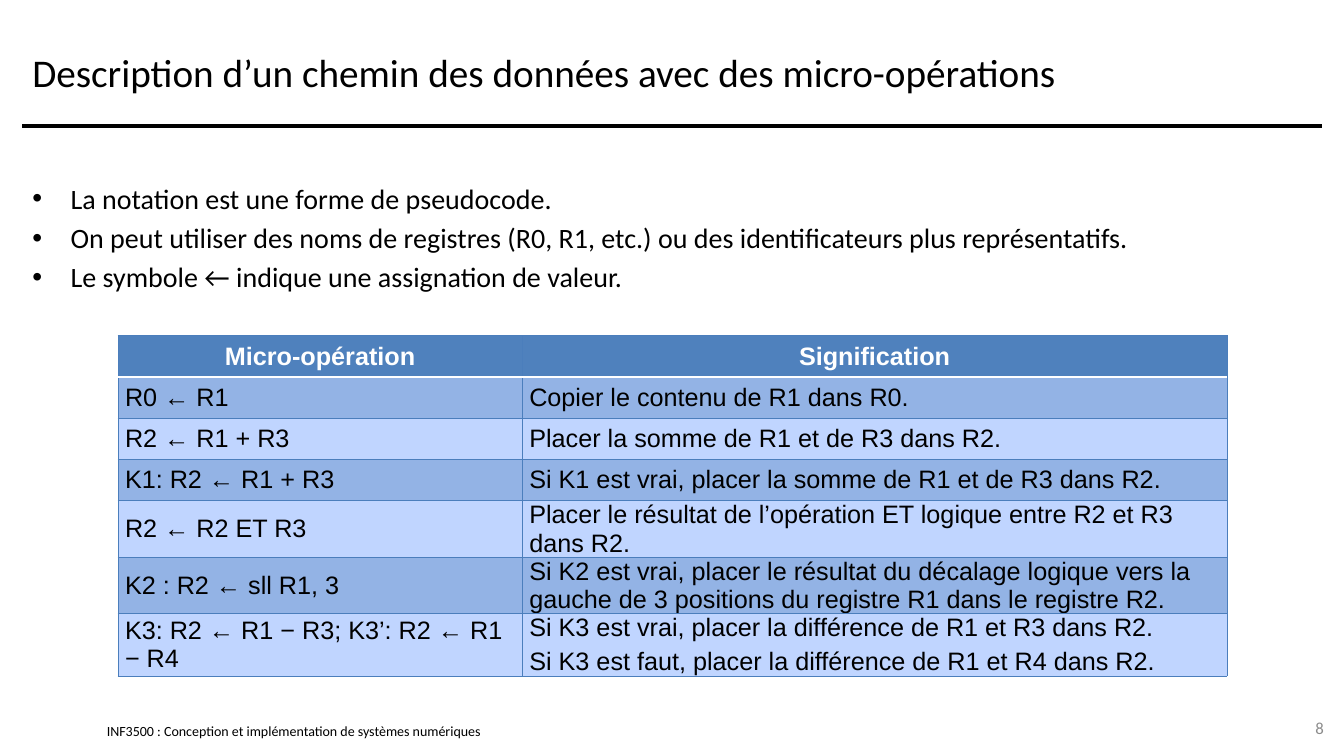
from lxml.etree import SubElement
from pptx import Presentation
from pptx.dml.color import RGBColor
from pptx.enum.shapes import MSO_CONNECTOR as Connector
from pptx.enum.text import MSO_ANCHOR as Anchor, MSO_AUTO_SIZE as AutoSize, PP_ALIGN as Align
from pptx.oxml.ns import qn
from pptx.util import Inches, Pt

COLORS = {"ink": "000000", "header": "4F81BD", "band": "93B3E5", "plain": "C0D5FF",
          "border": "4B7EBC", "white": "FFFFFF", "number": "8C8C8C"}

TITLE = "Description d’un chemin des données avec des micro-opérations"
BULLETS = [
    "La notation est une forme de pseudocode.",
    "On peut utiliser des noms de registres (R0, R1, etc.) ou des identificateurs plus représentatifs.",
    "Le symbole ← indique une assignation de valeur.",
]
OPERATIONS = [
    ("Micro-opération", "Signification"),
    ("R0 ← R1", "Copier le contenu de R1 dans R0."),
    ("R2 ← R1 + R3", "Placer la somme de R1 et de R3 dans R2."),
    ("K1: R2 ← R1 + R3", "Si K1 est vrai, placer la somme de R1 et de R3 dans R2."),
    ("R2 ← R2 ET R3", "Placer le résultat de l’opération ET logique entre R2 et R3 dans R2."),
    ("K2 : R2 ← sll R1, 3", "Si K2 est vrai, placer le résultat du décalage logique vers la "
     "gauche de 3 positions du registre R1 dans le registre R2."),
    ("K3: R2 ← R1 − R3; K3’: R2 ← R1 − R4",
     "Si K3 est vrai, placer la différence de R1 et R3 dans R2.\n"
     "Si K3 est faut, placer la différence de R1 et R4 dans R2."),
]
FOOTER = "INF3500 : Conception et implémentation de systèmes numériques"


def rgb(name):
    return RGBColor.from_string(COLORS[name])


def apply(target, formats):
    for attribute, value in formats.items():
        setattr(target, attribute, value)


def place(shape, box):
    apply(shape, dict(zip(("left", "top", "width", "height"), map(Inches, box))))


def style(paragraph, size, color="ink", font="Calibri", bold=False, **formats):
    apply(paragraph, formats)
    apply(paragraph.font, {"size": Pt(size), "name": font, "bold": bold})
    paragraph.font.color.rgb = rgb(color)


# Title and the rule along the bottom of its box
def add_heading(slide, box):
    left, top, width, height = box
    heading = slide.shapes.title
    place(heading, box)
    heading.text = TITLE
    apply(heading.text_frame, {"vertical_anchor": Anchor.MIDDLE, "auto_size": AutoSize.NONE})
    style(heading.text_frame.paragraphs[0], 28, alignment=Align.LEFT)

    base = Inches(top + height)
    rule = slide.shapes.add_connector(
        Connector.STRAIGHT, Inches(left), base, Inches(left + width), base)
    rule.line.color.rgb = rgb("ink")
    rule.line.width = Pt(3)
    SubElement(rule._element.spPr, qn("a:effectLst"))


# Bullet list
def add_bullets(slide, box):
    notation = slide.placeholders[1]
    place(notation, box)
    frame = notation.text_frame
    frame.text = "\n".join(BULLETS)
    apply(frame, {"vertical_anchor": Anchor.TOP, "auto_size": AutoSize.NONE})
    for index, paragraph in enumerate(frame.paragraphs):
        properties = paragraph._p.get_or_add_pPr()
        properties.set("marL", str(Inches(0.38)))
        properties.set("indent", str(Inches(-0.38)))
        SubElement(properties, qn("a:buFont"), typeface="Arial")
        SubElement(properties, qn("a:buChar"), char="•")
        style(paragraph, 20, space_before=Pt(4 if index else 0))


def set_borders(cell, row):
    properties = cell._tc.get_or_add_tcPr()
    for side in ("L", "R", "T", "B"):
        under_header = (row, side) in ((0, "B"), (1, "T"))
        color, points = ("white", 2) if under_header else ("border", 0.75)
        edge = SubElement(properties, qn(f"a:ln{side}"), w=str(Pt(points)))
        SubElement(SubElement(edge, qn("a:solidFill")), qn("a:srgbClr"), val=COLORS[color])


# Table of micro-operations
def add_operations(slide, box):
    operations = slide.shapes.add_table(len(OPERATIONS), 2, *map(Inches, box)).table
    for column, width in zip(operations.columns, (4.01, box[2] - 4.01)):
        column.width = Inches(width)
    for row, height in zip(operations.rows, [0.41] * 4 + [0.56] * 2 + [0.61]):
        row.height = Inches(height)
    for row, texts in enumerate(OPERATIONS):
        header = row == 0
        fill = "header" if header else ("band" if row % 2 else "plain")
        for column, text in enumerate(texts):
            cell = operations.cell(row, column)
            cell.text = text
            apply(cell, {"vertical_anchor": Anchor.MIDDLE,
                         "margin_left": Inches(0.07), "margin_right": Inches(0.07),
                         "margin_top": 0, "margin_bottom": 0})
            set_borders(cell, row)
            cell.fill.solid()
            cell.fill.fore_color.rgb = rgb(fill)
            for index, paragraph in enumerate(cell.text_frame.paragraphs):
                style(paragraph, 18, "white" if header else "ink", "Arial", header,
                      alignment=Align.CENTER if header else Align.LEFT,
                      space_before=Pt(2 if index else 0), space_after=Pt(2))


# Footer texts
def add_note(slide, box, text, size, color, alignment, margins):
    note = slide.shapes.add_textbox(*map(Inches, box)).text_frame
    note.text = text
    apply(note, {"word_wrap": True, "vertical_anchor": Anchor.MIDDLE, **margins})
    style(note.paragraphs[0], size, color, alignment=alignment)


def main():
    prs = Presentation()
    apply(prs, {"slide_width": Inches(13.33), "slide_height": Inches(7.5)})
    slide = prs.slides.add_slide(prs.slide_layouts[1])
    add_heading(slide, (0.22, 0.17, 12.89, 1.08))
    add_bullets(slide, (0.22, 1.75, 12.89, 5.25))
    add_operations(slide, (1.17, 3.33, 11, 3.37))
    flush = {f"margin_{side}": 0 for side in ("left", "right", "top", "bottom")}
    add_note(slide, (1.06, 7.17, 5.11, 0.17), FOOTER, 10, "ink", Align.LEFT, flush)
    add_note(slide, (12.56, 7.02, 0.67, 0.4), "8", 12, "number", Align.RIGHT, {})
    prs.save("out.pptx")


if __name__ == "__main__":
    main()
